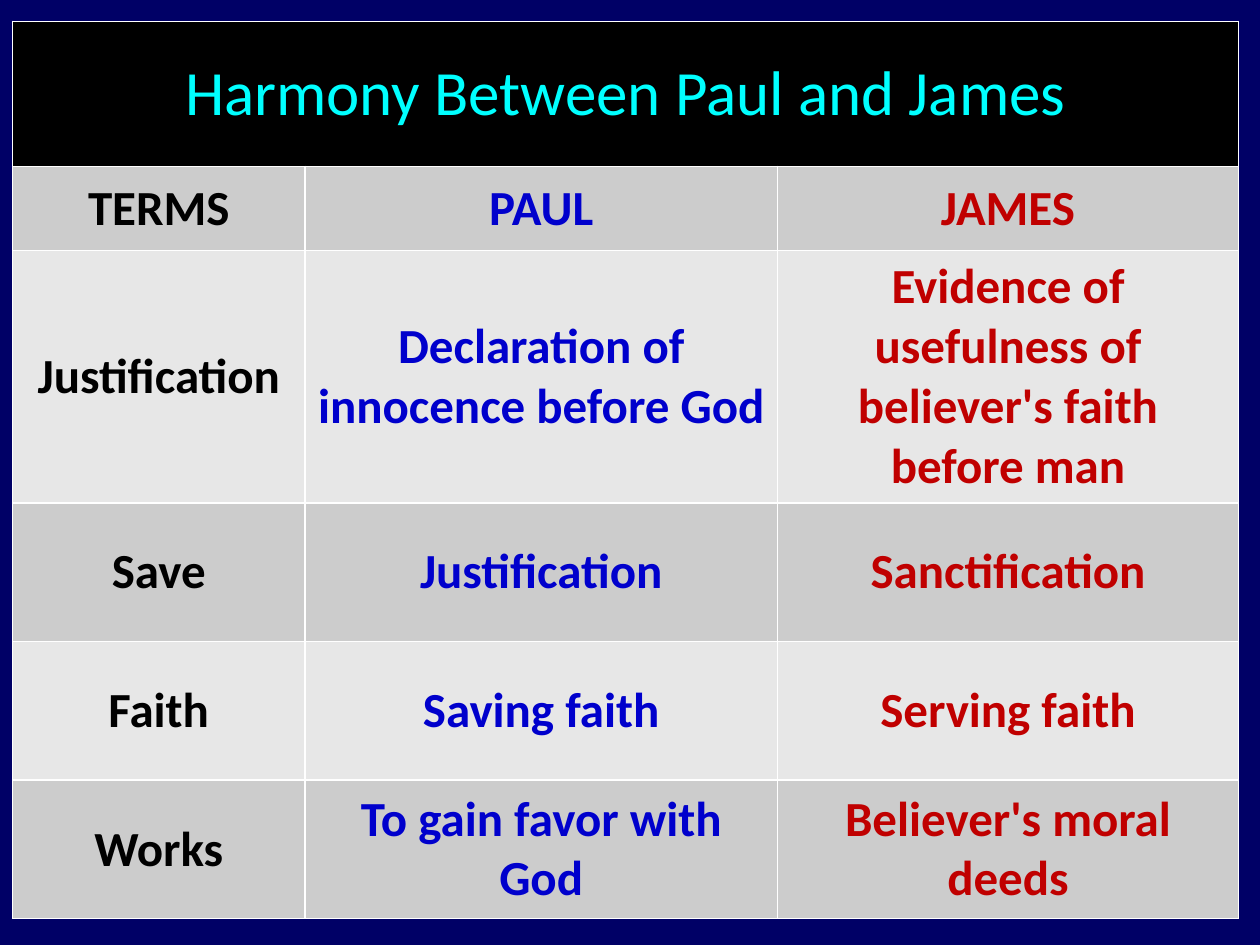
from dataclasses import dataclass

from lxml import etree
from pptx import Presentation
from pptx.dml.color import RGBColor
from pptx.enum import text
from pptx.oxml import ns
from pptx.util import Inches, Pt

HUES = {
    "back": "000066", "head": "000000", "title": "00FFFF",
    "dark": "CCCCCC", "light": "E7E7E7",
    "term": "000000", "paul": "0000CC", "james": "C00000",
}
WIDTHS = (2.32, 3.75, 3.66)
HEIGHTS = (1.15, 0.67, 2.0, 1.1, 1.1, 1.1)


@dataclass
class Row:
    term: str
    paul: str
    james: str


ROWS = [
    Row("TERMS", "PAUL", "JAMES"),
    Row("Justification", "Declaration of innocence before God",
        "Evidence of usefulness of believer's faith before man"),
    Row("Save", "Justification", "Sanctification"),
    Row("Faith", "Saving faith", "Serving faith"),
    Row("Works", "To gain favor with God", "Believer's moral deeds"),
]


def hue(name: str) -> RGBColor:
    return RGBColor.from_string(HUES[name])


def lead(para, share: int) -> None:
    """Set the space before a paragraph as a percentage of its line."""
    space = etree.SubElement(para._p.get_or_add_pPr(), ns.qn("a:spcBef"))
    etree.SubElement(space, ns.qn("a:spcPct")).set("val", str(share * 1000))


def write(cell, words: str, ink: str, fill: str, size: int, bold: bool):
    cell.fill.solid()
    cell.fill.fore_color.rgb = hue(fill)
    cell.vertical_anchor = text.MSO_ANCHOR.MIDDLE
    para = cell.text_frame.paragraphs[0]
    para.alignment = text.PP_ALIGN.CENTER
    run = para.add_run()
    run.text = words
    font = run.font
    font.name, font.size, font.bold = "Calibri", Pt(size), bold
    font.color.rgb = hue(ink)
    return para


def main() -> None:
    deck = Presentation()
    deck.slide_width, deck.slide_height = Inches(10), Inches(7.5)
    slide = deck.slides.add_slide(deck.slide_layouts[6])
    slide.background.fill.solid()
    slide.background.fill.fore_color.rgb = hue("back")

    # The default table style supplies the white rules.
    grid = slide.shapes.add_table(
        len(HEIGHTS), len(WIDTHS), Inches(0.1), Inches(0.17),
        Inches(sum(WIDTHS)), Inches(sum(HEIGHTS))).table
    for col, width in zip(grid.columns, WIDTHS):
        col.width = Inches(width)
    for row, height in zip(grid.rows, HEIGHTS):
        row.height = Inches(height)

    head = grid.cell(0, 0)
    head.merge(grid.cell(0, len(WIDTHS) - 1))
    write(head, "Harmony Between Paul and James", "title", "head", 36, False)
    for r, row in enumerate(ROWS, 1):
        fill = "dark" if r % 2 else "light"
        for c, ink in enumerate(("term", "paul", "james")):
            words = getattr(row, ink)
            lead(write(grid.cell(r, c), words, ink, fill, 28, True), 20)

    deck.save("out.pptx")


if __name__ == "__main__":
    main()
